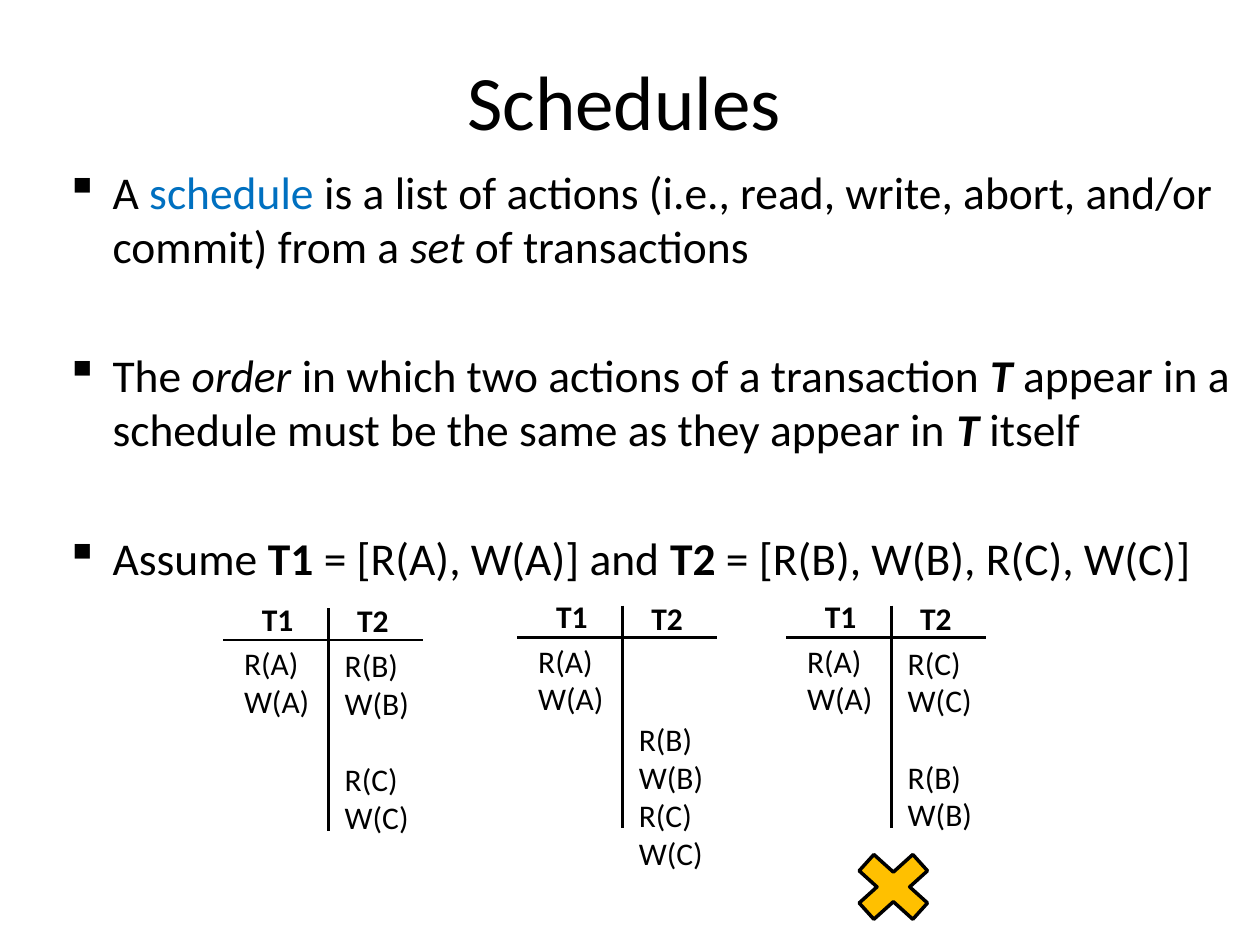
from dataclasses import dataclass

from lxml.etree import SubElement
from pptx import Presentation
from pptx.dml.color import RGBColor
from pptx.enum.shapes import MSO_CONNECTOR, MSO_SHAPE
from pptx.enum.text import MSO_ANCHOR, MSO_AUTO_SIZE, PP_ALIGN
from pptx.oxml.ns import qn
from pptx.util import Cm, Pt


@dataclass(frozen=True)
class Theme:
    font: str = "Calibri"
    ink: RGBColor = RGBColor(0, 0, 0)
    term: RGBColor = RGBColor(0x00, 0x70, 0xC0)
    cross: RGBColor = RGBColor(0xFF, 0xC0, 0x00)
    title: int = 44
    body: int = 26
    action: int = 18


theme = Theme()
LINE_HEIGHT = 1.22  # of the type size

deck = Presentation()
deck.slide_width, deck.slide_height = Cm(25.4), Cm(19.05)
slide = deck.slides.add_slide(deck.slide_layouts[6])


def add_text(paragraphs, left, top, width, height, *, size, gaps=None, wrap=True,
             align=PP_ALIGN.LEFT, anchor=MSO_ANCHOR.TOP, bullet=None):
    """Each paragraph is a list of (text, style); style holds b, i or t (term)."""
    box = slide.shapes.add_textbox(Cm(left), Cm(top), Cm(width), Cm(height))
    frame = box.text_frame
    frame.word_wrap = wrap
    frame.auto_size = MSO_AUTO_SIZE.NONE if wrap else MSO_AUTO_SIZE.SHAPE_TO_FIT_TEXT
    frame.vertical_anchor = anchor
    for number, runs in enumerate(paragraphs):
        paragraph = frame.add_paragraph() if number else frame.paragraphs[0]
        paragraph.alignment = align
        if gaps:
            paragraph.space_before = Pt(gaps[number])
        if bullet:
            properties = paragraph._p.get_or_add_pPr()
            properties.set("marL", str(Cm(0.95)))
            properties.set("indent", str(-Cm(0.95)))
            SubElement(properties, qn("a:buChar")).set("char", bullet)
        for text, style in runs:
            run = paragraph.add_run()
            run.text = text
            run.font.name, run.font.size = theme.font, Pt(size)
            run.font.bold, run.font.italic = "b" in style, "i" in style
            run.font.color.rgb = theme.term if "t" in style else theme.ink


def add_rule(x1, y1, x2, y2):
    rule = slide.shapes.add_connector(
        MSO_CONNECTOR.STRAIGHT, Cm(x1), Cm(y1), Cm(x2), Cm(y2))
    rule.line.color.rgb, rule.line.width = theme.ink, Pt(1.5)
    SubElement(rule._element.spPr, qn("a:effectLst"))


# Title
add_text([[("Schedules", "")]], 0.2, 0.43, 24.77, 3.18, size=theme.title,
         align=PP_ALIGN.CENTER, anchor=MSO_ANCHOR.MIDDLE)

# Definition, ordering rule and example
statements = [
    [("A ", ""), ("schedule ", "t"),
     ("is a list of actions (i.e., read, write, abort, and/or commit) from a ", ""),
     ("set", "i"), (" of transactions", "")],
    [("The ", ""), ("order", "i"), (" in which two actions of a transaction ", ""),
     ("T", "bi"), (" appear in a schedule must be the same as they appear in ", ""),
     ("T", "bi"), (" itself", "")],
    [("Assume ", ""), ("T1", "b"), (" = [R(A), W(A)] and ", ""),
     ("T2", "b"), (" = [R(B), W(B), R(C), W(C)]", "")],
]
first_gap = 0.2 * theme.body
statement_gap = 2 * first_gap + LINE_HEIGHT * theme.body
add_text(statements, 1.07, 3.18, 24, 14.17, size=theme.body, bullet="▪",
         gaps=[first_gap, statement_gap, statement_gap])

# Three schedules: left edge, header rule height, T2 actions by time slot
schedules = [
    (4.5, 12.9, ["R(B)", "W(B)", None, "R(C)", "W(C)"]),
    (10.43, 12.85, [None, None, "R(B)", "W(B)", "R(C)", "W(C)"]),
    (15.85, 12.85, ["R(C)", "W(C)", None, "R(B)", "W(B)"]),
]
slot_points = LINE_HEIGHT * theme.action
slot = Pt(slot_points).cm
for left, header, t2_actions in schedules:
    add_rule(left + 2.12, header - 0.64, left + 2.12, header + 3.85)
    add_rule(left, header, left + 4.02, header)
    for name, x, y in (("T1", 0.53, -0.93), ("T2", 2.45, -0.9)):
        add_text([[(name, "b")]], left + x, header + y, 1.14, 1.02,
                 size=theme.action, wrap=False)
    for actions, x, y in ((["R(A)", "W(A)"], 0.17, -0.04), (t2_actions, 2.2, 0)):
        # Idle slots become space before the next action, or lower the column
        busy = [n for n, action in enumerate(actions) if action]
        gaps = [0] + [(b - a - 1) * slot_points for a, b in zip(busy, busy[1:])]
        add_text([[(actions[n], "")] for n in busy],
                 left + x, header + y + busy[0] * slot, 1.85,
                 (len(actions) - busy[0]) * slot + 0.25,
                 size=theme.action, gaps=gaps, wrap=False)

# Cross under the invalid schedule
cross = slide.shapes.add_shape(
    MSO_SHAPE.MATH_MULTIPLY, Cm(16.97), Cm(16.94), Cm(2.08), Cm(1.88))
cross.shadow.inherit = False
cross.fill.solid()
cross.fill.fore_color.rgb = theme.cross
cross.line.color.rgb, cross.line.width = theme.ink, Pt(2)

deck.save("out.pptx")
